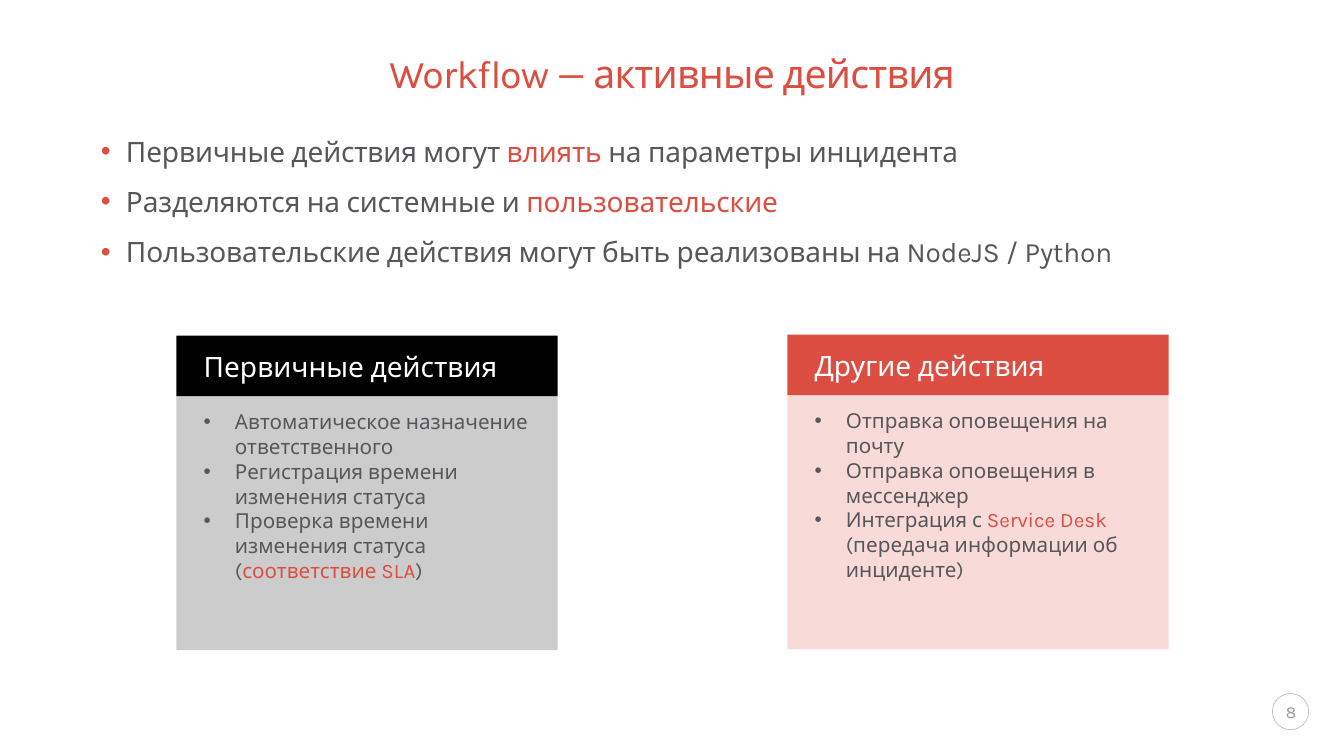
from dataclasses import dataclass
from typing import NamedTuple

from lxml import etree
from pptx import Presentation
from pptx import util as u
from pptx.dml.color import RGBColor
from pptx.enum import shapes, text
from pptx.oxml import ns

PX = 9144


@dataclass(frozen=True)
class Theme:
    """Colours, font and type sizes of the slide."""
    font: str = "Karla"
    red: str = "DC4E41"
    ink: str = "57565A"
    black: str = "000000"
    white: str = "FFFFFF"
    ring: str = "BFBFBF"
    number: str = "9A9A9B"
    title_size: float = 28
    body_size: float = 20
    card_size: float = 14.7
    number_size: float = 12


THEME = Theme()


class Area(NamedTuple):
    """A rectangle in px."""
    left: int
    top: int
    width: int
    height: int

    def emu(self) -> list[int]:
        """Give the rectangle in EMU."""
        return [value * PX for value in self]


class Span(NamedTuple):
    """Words in one colour."""
    words: str
    color: str = THEME.ink


class Style(NamedTuple):
    """Type size, letter spacing and bullets of a text."""
    size: float
    spacing: int = 0
    indent: int = 0
    bullet_color: str = ""
    gap: int = 0


class Card(NamedTuple):
    """A headed card with bullet items."""
    left: int
    top: int
    color: str
    heading: str
    items: list[list[Span]]


TITLE_STYLE = Style(THEME.title_size, spacing=-50)
BODY_STYLE = Style(THEME.body_size, -10, 25, THEME.red, 12)
HEADING_STYLE = Style(THEME.body_size)
ITEM_STYLE = Style(THEME.card_size, indent=31, bullet_color=THEME.ink)
NUMBER_STYLE = Style(THEME.number_size)

CARD_WIDTH, HEADING_HEIGHT, ITEMS_HEIGHT = 378, 60, 252

POINTS = [
    [Span("Первичные действия могут "), Span("влиять", THEME.red), Span(" на параметры инцидента")],
    [Span("Разделяются на системные и "), Span("пользовательские", THEME.red)],
    [Span("Пользовательские действия могут быть реализованы на NodeJS / Python")],
]

CARDS = [
    Card(175, 333, THEME.black, "Первичные действия", [
        [Span("Автоматическое назначение ответственного")],
        [Span("Регистрация времени изменения статуса")],
        [Span("Проверка времени изменения статуса ("), Span("соответствие SLA", THEME.red), Span(")")],
    ]),
    Card(781, 332, THEME.red, "Другие действия", [
        [Span("Отправка оповещения на почту")],
        [Span("Отправка оповещения в мессенджер")],
        [Span("Интеграция с "), Span("Service Desk ", THEME.red),
         Span("(передача информации об инциденте)")],
    ]),
]


def rgb(color: str) -> RGBColor:
    """Turn a hex colour into an RGBColor."""
    return RGBColor.from_string(color)


def add_bullet(para, style: Style) -> None:
    """Give a paragraph a hanging round bullet."""
    props = para._p.get_or_add_pPr()
    props.set("marL", str(style.indent * PX))
    props.set("indent", str(-style.indent * PX))
    tint = etree.SubElement(props, ns.qn("a:buClr"))
    etree.SubElement(tint, ns.qn("a:srgbClr"), val=style.bullet_color)
    etree.SubElement(props, ns.qn("a:buFont"), typeface="Arial")
    etree.SubElement(props, ns.qn("a:buChar"), char="•")


def write(box, paras: list[list[Span]], style: Style, align=text.PP_ALIGN.LEFT,
          anchor=text.MSO_ANCHOR.TOP, inset: tuple[int, int] = (0, 0), wrap: bool = True) -> None:
    """Fill a box with paragraphs of coloured spans."""
    frame = box.text_frame
    frame.word_wrap = wrap
    frame.vertical_anchor = anchor
    frame.margin_left = frame.margin_right = inset[0] * PX
    frame.margin_top = frame.margin_bottom = inset[1] * PX
    for index, spans in enumerate(paras):
        para = frame.add_paragraph() if index else frame.paragraphs[0]
        if style.indent:
            add_bullet(para, style)
        para.alignment = align
        if index and style.gap:
            para.space_before = u.Pt(style.gap)
        for span in spans:
            run = para.add_run()
            run.text = span.words
            run.font.name = THEME.font
            run.font.size = u.Pt(style.size)
            run.font.color.rgb = rgb(span.color)
            if style.spacing:
                run._r.get_or_add_rPr().set("spc", str(style.spacing))


def add_panel(group, area: Area, color: str, opacity: int = 100):
    """Add a filled rectangle without an outline."""
    panel = group.shapes.add_shape(shapes.MSO_SHAPE.RECTANGLE, *area.emu())
    panel.shadow.inherit = False
    panel.line.fill.background()
    panel.fill.solid()
    panel.fill.fore_color.rgb = rgb(color)
    if opacity < 100:
        tint = panel._element.spPr.find(ns.qn("a:solidFill"))[0]
        etree.SubElement(tint, ns.qn("a:alpha"), val=str(opacity * 1000))
    return panel


def add_card(page, card: Card) -> None:
    """Add a heading panel above a pale panel of items."""
    group = page.shapes.add_group_shape()
    heading = add_panel(group, Area(card.left, card.top, CARD_WIDTH, HEADING_HEIGHT), card.color)
    write(heading, [[Span(card.heading, THEME.white)]], HEADING_STYLE,
          anchor=text.MSO_ANCHOR.BOTTOM, inset=(27, 13))
    heading.text_frame.auto_size = text.MSO_AUTO_SIZE.SHAPE_TO_FIT_TEXT
    items_area = Area(card.left, card.top + HEADING_HEIGHT, CARD_WIDTH, ITEMS_HEIGHT)
    items = add_panel(group, items_area, card.color, opacity=20)
    write(items, card.items, ITEM_STYLE, inset=(27, 13))


def add_page_number(page, number: str) -> None:
    """Add the page number and the ring around it."""
    box = page.shapes.add_textbox(*Area(1273, 688, 15, 36).emu())
    write(box, [[Span(number, THEME.number)]], NUMBER_STYLE, text.PP_ALIGN.CENTER,
          text.MSO_ANCHOR.MIDDLE, (13, 7), wrap=False)
    ring = page.shapes.add_shape(shapes.MSO_SHAPE.OVAL, *Area(1262, 688, 36, 36).emu())
    ring.shadow.inherit = False
    ring.fill.background()
    ring.line.color.rgb = rgb(THEME.ring)
    ring.line.width = u.Pt(0.5)


def main() -> None:
    """Build the slide and save the deck."""
    deck = Presentation()
    deck.slide_width, deck.slide_height = 1333 * PX, 750 * PX
    page = deck.slides.add_slide(deck.slide_layouts[6])
    add_page_number(page, "8")
    title = page.shapes.add_textbox(*Area(100, 31, 1133, 89).emu())
    write(title, [[Span("Workflow — активные действия", THEME.red)]], TITLE_STYLE,
          text.PP_ALIGN.CENTER, text.MSO_ANCHOR.MIDDLE)
    title.text_frame.paragraphs[0].line_spacing = 0.86
    body = page.shapes.add_textbox(*Area(100, 133, 1133, 159).emu())
    write(body, POINTS, BODY_STYLE)
    for card in CARDS:
        add_card(page, card)
    deck.save("out.pptx")


if __name__ == "__main__":
    main()
